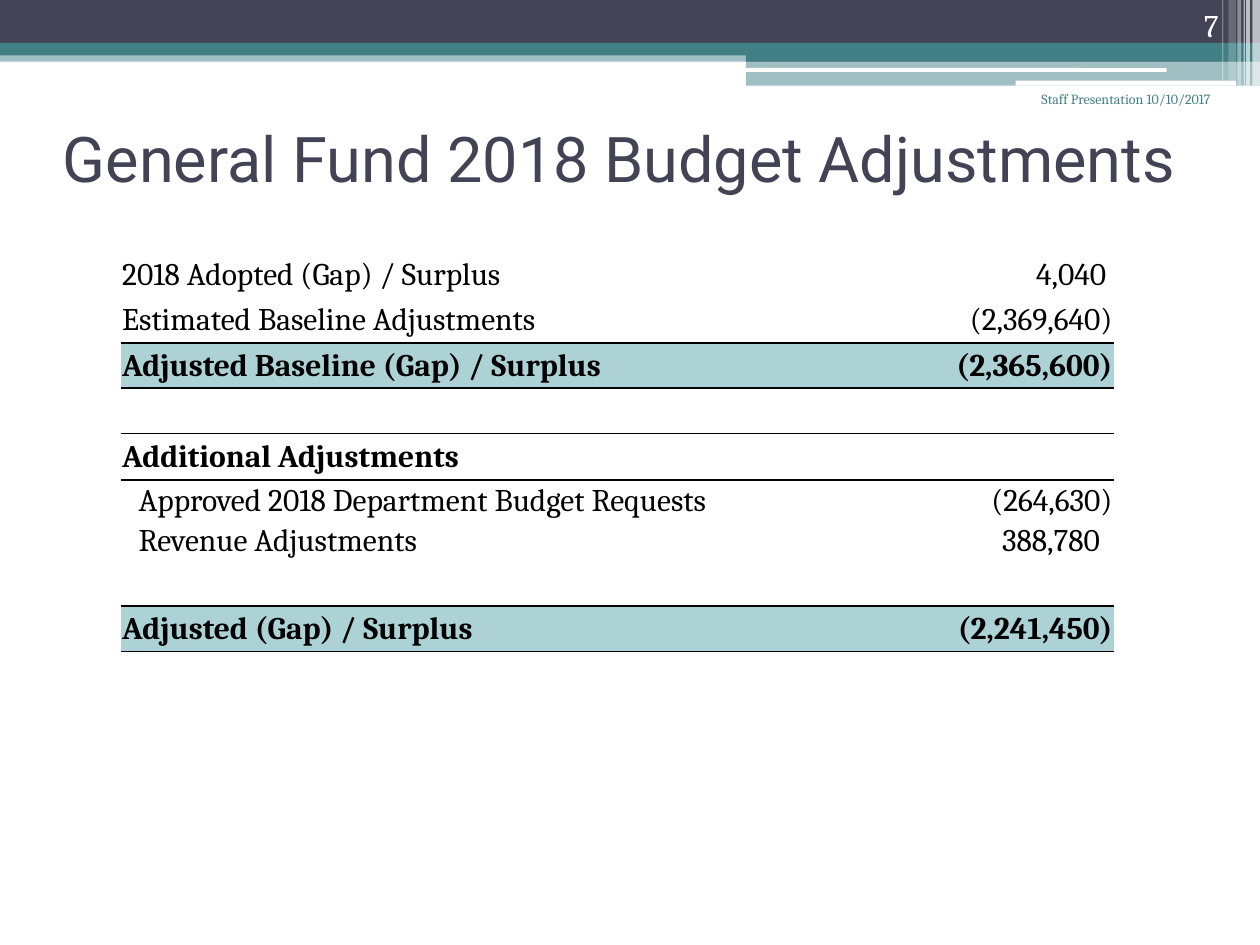
from lxml.etree import SubElement
from pptx import Presentation
from pptx.dml.color import RGBColor as Rgb
from pptx.enum.shapes import MSO_SHAPE as Shape
from pptx.enum.text import MSO_ANCHOR as Anchor, PP_ALIGN as Align
from pptx.oxml.ns import qn
from pptx.util import Inches, Pt

COLORS = {
    "slate": "424456", "teal": "438086", "white": "FFFFFF",
    "total": "ADD2D6", "black": "000000",
}
# The page is a grid of 100 columns by 75 rows
CELL = Inches(0.1)
COLUMNS, ROWS = 100, 75
NO_STYLE = "{2D5ABB26-0587-4C30-8999-92F81FD0307C}"
THICK, THIN = 1.25, 0.75

# left, top, width, height, color, opacity in percent
BANDS = [
    (0, 4, COLUMNS, 0.9, "teal", 50),
    (0, 0, COLUMNS, 3.4, "slate", 100),
    (0, 3.4, COLUMNS, 1, "teal", 100),
    (59.2, 3.9, 40.8, 1, "teal", 100),
    (59.2, 4.8, 40.8, 2, "teal", 50),
]
WHITE_BARS = [(59.1, 5.4, 33.5, 0.3), (80.6, 6.4, 17.5, 0.4)]
# left, width, height, opacity in percent
STRIPES = [
    (99.4, 0.6, 6.8, 65), (98.9, 0.3, 6.8, 65), (98.7, 0.1, 6.8, 60),
    (98.2, 0.3, 6.8, 40), (97.5, 0.6, 6.4, 20), (97, 0.1, 6.4, 30),
]

# label, amount, row height, look, space right of the amount
BUDGET = [
    ("2018 Adopted (Gap) / Surplus", "4,040", 3.6, "plain", 0.6),
    ("Estimated Baseline Adjustments", "(2,369,640)", 3.6, "plain", 0.1),
    ("Adjusted Baseline (Gap) / Surplus", "(2,365,600)", 3.6, "total", 0.1),
    ("", "", 3.6, "plain", 0.1),
    ("Additional Adjustments", "", 3.7, "heading", 0.1),
    ("Approved 2018 Department Budget Requests", "(264,630)", 3.3, "detail", 0.1),
    ("Revenue Adjustments", "388,780", 3.1, "detail", 1.1),
    ("", "", 3.6, "plain", 0.1),
    ("Adjusted (Gap) / Surplus", "(2,241,450)", 3.6, "total", 0.1),
]
# Rules above and below a row: row -> {side: width}
RULES = {
    1: {"lnB": THICK}, 2: {"lnT": THICK, "lnB": THICK},
    3: {"lnT": THICK, "lnB": THIN}, 4: {"lnT": THIN},
    7: {"lnB": THICK}, 8: {"lnT": THICK, "lnB": THIN},
}


def grid(*lengths):
    return [round(length * CELL) for length in lengths]


def color(name):
    return Rgb.from_string(COLORS[name])


def add_bar(page, area, fill, opacity=100, kind=Shape.RECTANGLE):
    bar = page.shapes.add_shape(kind, *grid(*area))
    bar.shadow.inherit = False
    bar.line.fill.background()
    bar.fill.solid()
    bar.fill.fore_color.rgb = color(fill)
    if opacity < 100:
        tone = bar.fill._xPr.find(f".//{qn('a:srgbClr')}")
        SubElement(tone, qn("a:alpha"), val=str(opacity * 1000))


def style(para, size, fill, font="Cambria", bold=False, align=Align.LEFT):
    para.alignment = align
    para.font.size = Pt(size)
    para.font.name = font
    para.font.bold = bold
    para.font.color.rgb = color(fill)


def add_text(page, area, text, anchor, *look, **options):
    box = page.shapes.add_textbox(*grid(*area))
    frame = box.text_frame
    frame.word_wrap = True
    frame.vertical_anchor = anchor
    frame.text = text
    style(frame.paragraphs[0], *look, **options)


def add_rule(cell, side, width):
    line = SubElement(cell._tc.get_or_add_tcPr(), qn(f"a:{side}"), w=str(Pt(width)))
    fill = SubElement(line, qn("a:solidFill"))
    SubElement(fill, qn("a:srgbClr"), val=COLORS["black"])


def fill_cell(cell, text, look, align, right, rules):
    cell.margin_left, cell.margin_top, cell.margin_right, cell.margin_bottom = grid(
        1.4 if look == "detail" and align == Align.LEFT else 0.1, 0.1, right, 0)
    cell.vertical_anchor = Anchor.MIDDLE
    cell.text = text
    style(cell.text_frame.paragraphs[0], 18, "black",
          bold=look in ("total", "heading"), align=align)
    # Rules come before the fill in the cell's properties
    for side, width in rules.items():
        add_rule(cell, side, width)
    if look == "total":
        cell.fill.solid()
        cell.fill.fore_color.rgb = color("total")
    else:
        cell.fill.background()


def add_budget_table(page):
    height = sum(row[2] for row in BUDGET)
    frame = page.shapes.add_table(len(BUDGET), 2, *grid(9.6, 20, 78.8, height))
    table = frame.table
    table.first_row = table.horz_banding = False
    table._tbl.tblPr.find(qn("a:tableStyleId")).text = NO_STYLE
    for column, width in zip(table.columns, grid(59.6, 19.2)):
        column.width = width
    for index, (label, amount, tall, look, right) in enumerate(BUDGET):
        table.rows[index].height = grid(tall)[0]
        rules = RULES.get(index, {})
        fill_cell(table.cell(index, 0), label, look, Align.LEFT, 0.1, rules)
        fill_cell(table.cell(index, 1), amount, look, Align.RIGHT, right, rules)


def main():
    deck = Presentation()
    deck.slide_width, deck.slide_height = grid(COLUMNS, ROWS)
    page = deck.slides.add_slide(deck.slide_layouts[6])

    # Header decoration
    for *area, fill, opacity in BANDS:
        add_bar(page, area, fill, opacity)
    for area in WHITE_BARS:
        add_bar(page, area, "white", kind=Shape.ROUNDED_RECTANGLE)
    for left, width, height, opacity in STRIPES:
        add_bar(page, (left, 0, width, height), "white", opacity)

    # Title, page number and date line
    add_text(page, (4, 10, 90.8, 5), "General Fund 2018 Budget Adjustments",
             Anchor.MIDDLE, 36, "slate", font="Roboto")
    add_text(page, (89.4, 0, 8.3, 4), "7", Anchor.BOTTOM, 18, "white",
             align=Align.RIGHT)
    add_text(page, (70.8, 6.7, 26.3, 2.5), "Staff Presentation 10/10/2017",
             Anchor.TOP, 8, "teal", align=Align.RIGHT)

    add_budget_table(page)
    deck.save("out.pptx")


if __name__ == "__main__":
    main()
